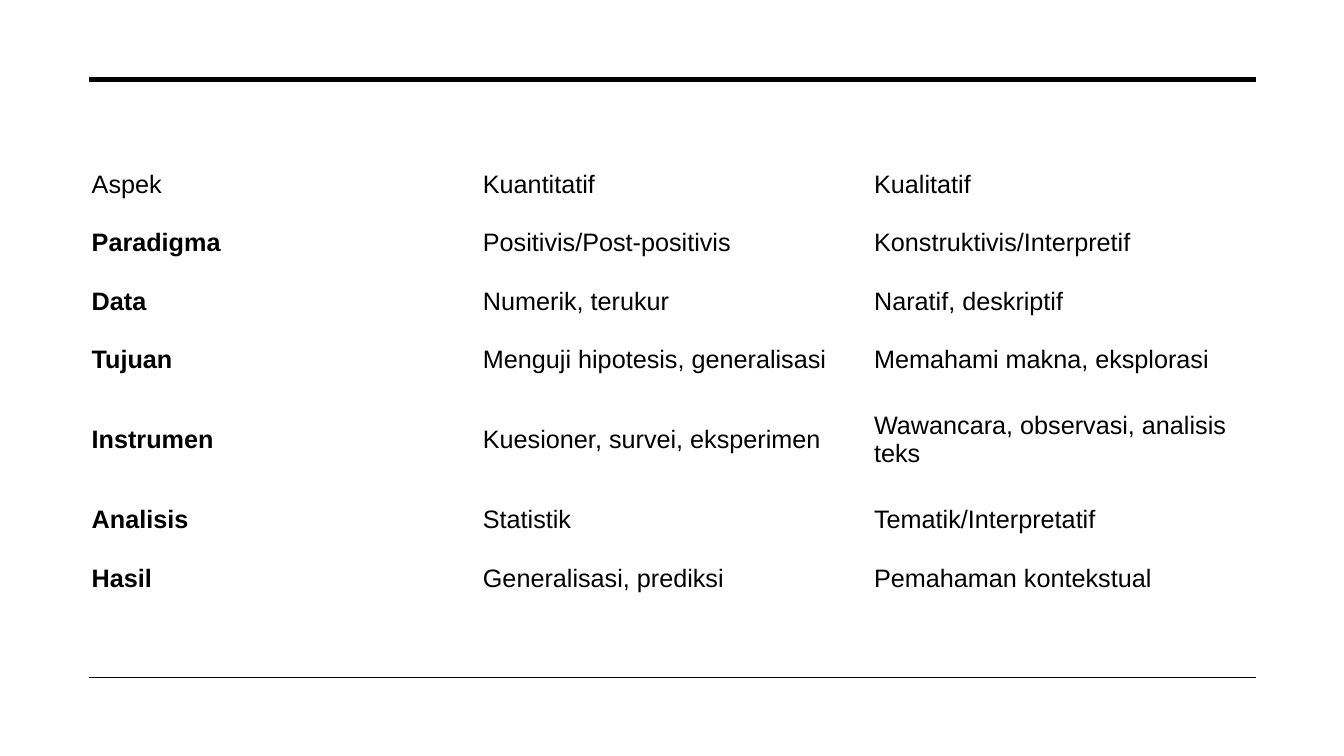
from lxml.etree import SubElement
from pptx import Presentation
from pptx.dml.color import RGBColor
from pptx.enum.shapes import MSO_CONNECTOR
from pptx.enum.text import MSO_ANCHOR
from pptx.oxml.ns import qn
from pptx.util import Inches, Pt

BLACK = RGBColor(0x00, 0x00, 0x00)
WHITE = RGBColor(0xFF, 0xFF, 0xFF)

RULE_LEFT, RULE_RIGHT = Inches(0.88), Inches(12.46)
RULES = [(0.79, 3.5), (6.72, 1)]  # height on the slide, line width

TABLE_LEFT, TABLE_TOP = Inches(0.81), Inches(1.54)
COL_W, ROW_H, TALL_ROW_H = Inches(3.88), Inches(0.58), Inches(1.01)
TALL_ROW = "Instrumen"
ROWS = [
    ("Aspek", "Kuantitatif", "Kualitatif"),
    ("Paradigma", "Positivis/Post-positivis", "Konstruktivis/Interpretif"),
    ("Data", "Numerik, terukur", "Naratif, deskriptif"),
    ("Tujuan", "Menguji hipotesis, generalisasi", "Memahami makna, eksplorasi"),
    ("Instrumen", "Kuesioner, survei, eksperimen", "Wawancara, observasi, analisis teks"),
    ("Analisis", "Statistik", "Tematik/Interpretatif"),
    ("Hasil", "Generalisasi, prediksi", "Pemahaman kontekstual"),
]
FONT = {"name": "Arial", "size": Pt(18)}

prs = Presentation()
prs.slide_width, prs.slide_height = Inches(13.33), Inches(7.5)
s = prs.slides.add_slide(prs.slide_layouts[6])
s.background.fill.solid()
s.background.fill.fore_color.rgb = WHITE

for y, width in RULES:
    rule = s.shapes.add_connector(
        MSO_CONNECTOR.STRAIGHT, RULE_LEFT, Inches(y), RULE_RIGHT, Inches(y))
    rule.line.color.rgb = BLACK
    rule.line.width = Pt(width)
    SubElement(rule.line._get_or_add_ln().getparent(), qn("a:effectLst"))

n_cols = len(ROWS[0])
heights = [TALL_ROW_H if row[0] == TALL_ROW else ROW_H for row in ROWS]
table = s.shapes.add_table(len(ROWS), n_cols, TABLE_LEFT, TABLE_TOP,
                           COL_W * n_cols, sum(heights)).table
table.first_row = table.horz_banding = False
for col in table.columns:
    col.width = COL_W

for i, (texts, height) in enumerate(zip(ROWS, heights)):
    table.rows[i].height = height
    for j, text in enumerate(texts):
        cell = table.cell(i, j)
        cell.fill.background()
        cell.vertical_anchor = MSO_ANCHOR.MIDDLE
        r = cell.text_frame.paragraphs[0].add_run()
        r.text = text
        for key, value in FONT.items():
            setattr(r.font, key, value)
        r.font.bold = i > 0 and j == 0
        r.font.color.rgb = BLACK

prs.save("out.pptx")
